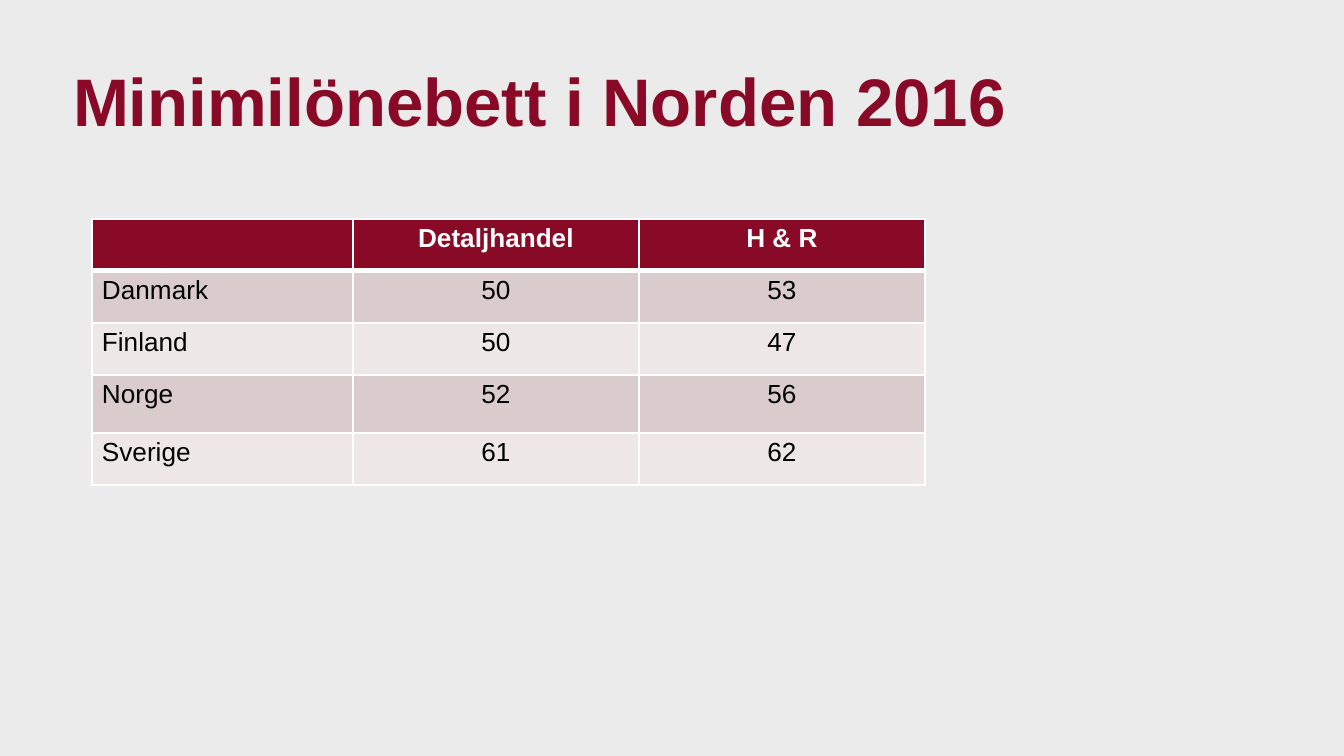
from dataclasses import dataclass

from lxml.etree import SubElement
from pptx import Presentation
from pptx.dml.color import RGBColor
from pptx.enum.text import MSO_ANCHOR, MSO_AUTO_SIZE, PP_ALIGN
from pptx.oxml.ns import qn
from pptx.util import Emu, Pt

EMU_PER_PX = 914400 / 134.4


def px(length):
    return Emu(round(length * EMU_PER_PX))


@dataclass(frozen=True)
class Theme:
    font: str = "Arial"
    background: str = "EBEBEC"
    accent: str = "880A26"
    header_text: str = "FFFFFF"
    body_text: str = "000000"
    grid: str = "FFFFFF"
    bands: tuple = ("DACCCD", "EDE7E8")
    title_size: int = 36
    table_size: int = 14
    grid_width: int = 1
    header_rule_width: int = 3


class SlideBuilder:
    def __init__(self, presentation, theme):
        self.theme = theme
        self.slide = presentation.slides.add_slide(presentation.slide_layouts[5])
        background = self.slide.background.fill
        background.solid()
        background.fore_color.rgb = RGBColor.from_string(theme.background)

    def style(self, paragraph, size, color, bold, align):
        paragraph.alignment = align
        font = paragraph.font
        font.name = self.theme.font
        font.size = Pt(size)
        font.bold = bold
        font.color.rgb = RGBColor.from_string(color)

    def title(self, text, left, top, width, height):
        title = self.slide.shapes.title
        title.left, title.top = px(left), px(top)
        title.width, title.height = px(width), px(height)
        frame = title.text_frame
        frame.text = text
        frame.word_wrap = True
        frame.auto_size = MSO_AUTO_SIZE.NONE
        frame.vertical_anchor = MSO_ANCHOR.MIDDLE
        frame.margin_left = 0
        self.style(frame.paragraphs[0], self.theme.title_size,
                   self.theme.accent, True, PP_ALIGN.LEFT)

    def table(self, rows, left, top, column_widths, row_heights):
        table = self.slide.shapes.add_table(
            len(rows), len(column_widths), px(left), px(top),
            px(sum(column_widths)), px(sum(row_heights))).table
        for column, width in zip(table.columns, column_widths):
            column.width = px(width)
        for row, height in zip(table.rows, row_heights):
            row.height = px(height)
        for r, values in enumerate(rows):
            for c, value in enumerate(values):
                self.cell(table.cell(r, c), value, r, c)

    def cell(self, cell, value, row, column):
        theme = self.theme
        is_header = row == 0
        cell.text = str(value)
        cell.margin_left = cell.margin_right = px(10)
        cell.margin_top = cell.margin_bottom = px(5)
        self.style(cell.text_frame.paragraphs[0], theme.table_size,
                   theme.header_text if is_header else theme.body_text,
                   is_header, PP_ALIGN.CENTER if column else PP_ALIGN.LEFT)
        self.borders(cell, row)
        cell.fill.solid()
        cell.fill.fore_color.rgb = RGBColor.from_string(
            theme.accent if is_header else theme.bands[(row - 1) % 2])

    def borders(self, cell, row):
        """Draw the grid, with a heavier rule between header and body."""
        properties = cell._tc.get_or_add_tcPr()
        header_rule = {0: "lnB", 1: "lnT"}.get(row)
        for side in ("lnL", "lnR", "lnT", "lnB"):
            width = (self.theme.header_rule_width if side == header_rule
                     else self.theme.grid_width)
            line = SubElement(properties, qn(f"a:{side}"), w=str(Pt(width)))
            fill = SubElement(line, qn("a:solidFill"))
            SubElement(fill, qn("a:srgbClr"), val=self.theme.grid)


def main():
    presentation = Presentation()
    presentation.slide_width, presentation.slide_height = px(1344), px(756)
    builder = SlideBuilder(presentation, Theme())
    builder.title("Minimilönebett i Norden 2016", 73, 43, 1195, 113)
    minimum_wage_bite = [
        ("", "Detaljhandel", "H & R"),
        ("Danmark", 50, 53),
        ("Finland", 50, 47),
        ("Norge", 52, 56),
        ("Sverige", 61, 62),
    ]
    builder.table(minimum_wage_bite, 92, 219,
                  column_widths=(261, 286, 286),
                  row_heights=(52, 52, 52, 58, 52))
    presentation.save("out.pptx")


if __name__ == "__main__":
    main()
